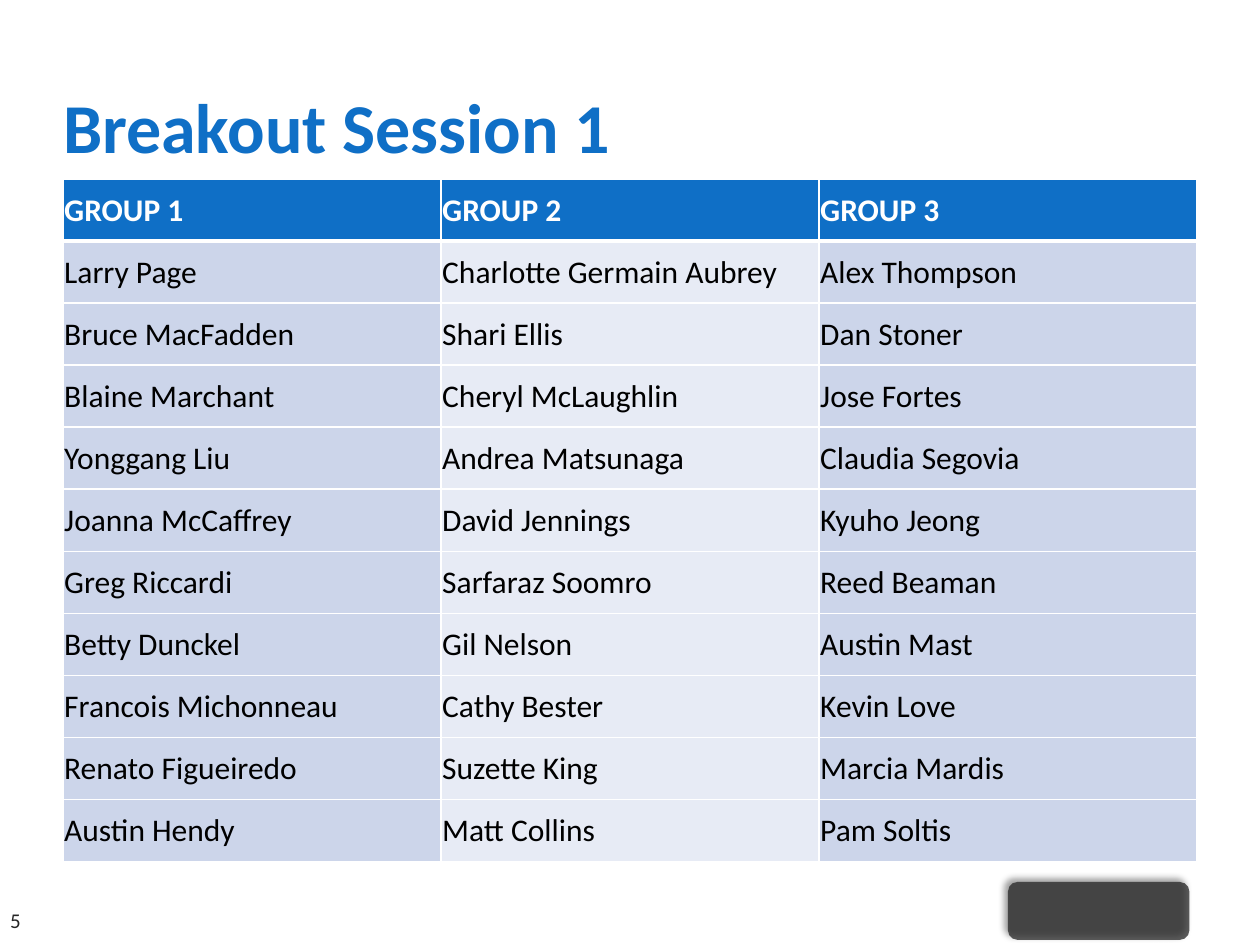
from lxml.etree import fromstring
from pptx import Presentation
from pptx.dml.color import RGBColor
from pptx.enum.shapes import MSO_SHAPE
from pptx.enum.text import MSO_ANCHOR, PP_ALIGN
from pptx.oxml import parse_xml
from pptx.oxml.ns import nsdecls, qn
from pptx.util import Inches, Pt

BLUE = RGBColor(0x0F, 0x6F, 0xC6)
DARK = RGBColor(0x26, 0x26, 0x26)
WHITE = RGBColor(0xFF, 0xFF, 0xFF)
BLACK = RGBColor(0x00, 0x00, 0x00)
COLUMN_FILLS = [RGBColor(0xCC, 0xD5, 0xEA), RGBColor(0xE7, 0xEB, 0xF5)]

GROUPS = {
    "GROUP 1": ["Larry Page", "Bruce MacFadden", "Blaine Marchant", "Yonggang Liu",
                "Joanna McCaffrey", "Greg Riccardi", "Betty Dunckel",
                "Francois Michonneau", "Renato Figueiredo", "Austin Hendy"],
    "GROUP 2": ["Charlotte Germain Aubrey", "Shari Ellis", "Cheryl McLaughlin",
                "Andrea Matsunaga", "David Jennings", "Sarfaraz Soomro", "Gil Nelson",
                "Cathy Bester", "Suzette King", "Matt Collins"],
    "GROUP 3": ["Alex Thompson", "Dan Stoner", "Jose Fortes", "Claudia Segovia",
                "Kyuho Jeong", "Reed Beaman", "Austin Mast", "Kevin Love",
                "Marcia Mardis", "Pam Soltis"],
}


def format_text(frame, size, color, bold=False):
    paragraph = frame.paragraphs[0]
    paragraph.alignment = PP_ALIGN.LEFT
    font = paragraph.runs[0].font
    font.name = "Calibri"
    font.size = Pt(size)
    font.bold = bold
    font.color.rgb = color


def set_borders(cell, widths):
    properties = cell._tc.get_or_add_tcPr()
    for position, (side, width) in enumerate(widths.items()):
        properties.insert(position, parse_xml(
            f'<a:ln{side} {nsdecls("a")} w="{Pt(width)}"><a:solidFill>'
            f'<a:srgbClr val="{WHITE}"/></a:solidFill></a:ln{side}>'))


prs = Presentation()
prs.slide_width, prs.slide_height = Inches(10), Inches(7.5)
slide = prs.slides.add_slide(prs.slide_layouts[5])

# Footer badge: translucent, with a soft shadow to the upper left
badge = slide.shapes.add_shape(MSO_SHAPE.ROUNDED_RECTANGLE,
                               Inches(8), Inches(7), Inches(1.44), Inches(0.46))
badge.fill.solid()
badge.fill.fore_color.rgb = DARK
badge.line.fill.background()
badge_color = badge._element.spPr.find(qn("a:solidFill"))[0]
badge_color.append(parse_xml(f'<a:alpha {nsdecls("a")} val="75000"/>'))
badge._element.spPr.append(parse_xml(
    f'<a:effectLst {nsdecls("a")}><a:outerShdw blurRad="{Pt(4)}" dist="{Pt(3)}" '
    'dir="13500000" algn="br" rotWithShape="0"><a:srgbClr val="000000">'
    '<a:alpha val="50000"/></a:srgbClr></a:outerShdw></a:effectLst>'))

# Title
title = slide.shapes.title
title.left, title.top = Inches(0.5), Inches(0.58)
title.width, title.height = Inches(9), Inches(0.75)
heading = title.text_frame
heading.text = "Breakout Session 1"
heading.vertical_anchor = MSO_ANCHOR.BOTTOM
heading.margin_left = heading.margin_right = heading.margin_bottom = 0
heading.margin_top = Inches(0.05)
format_text(heading, 40, BLUE, bold=True)

# Slide number
page_number = slide.shapes.add_textbox(
    Inches(0.08), Inches(7), Inches(0.5), Inches(0.4)).text_frame
page_number.text = "5"
page_number.word_wrap = True
page_number.vertical_anchor = MSO_ANCHOR.BOTTOM
page_number.margin_left = page_number.margin_right = 0
page_number.margin_top = page_number.margin_bottom = 0
format_text(page_number, 12, DARK)

# Group roster: one column per group
row_count = 1 + max(len(members) for members in GROUPS.values())
roster = slide.shapes.add_table(row_count, len(GROUPS), Inches(0.5), Inches(1.42),
                                Inches(9), Inches(5.42)).table
roster.horz_banding = False
for column, (group, members) in enumerate(GROUPS.items()):
    for row, name in enumerate([group] + members):
        is_header = row == 0
        cell = roster.cell(row, column)
        cell.text = name
        cell.vertical_anchor = MSO_ANCHOR.MIDDLE
        cell.margin_left = cell.margin_right = cell.margin_top = Inches(0.01)
        cell.margin_bottom = 0
        cell.fill.solid()
        cell.fill.fore_color.rgb = BLUE if is_header else COLUMN_FILLS[column % 2]
        format_text(cell.text_frame, 18, WHITE if is_header else BLACK, bold=is_header)
        set_borders(cell, {"L": 1, "R": 1, "T": 3 if row == 1 else 1,
                           "B": 3 if is_header else 1})

prs.save("out.pptx")
